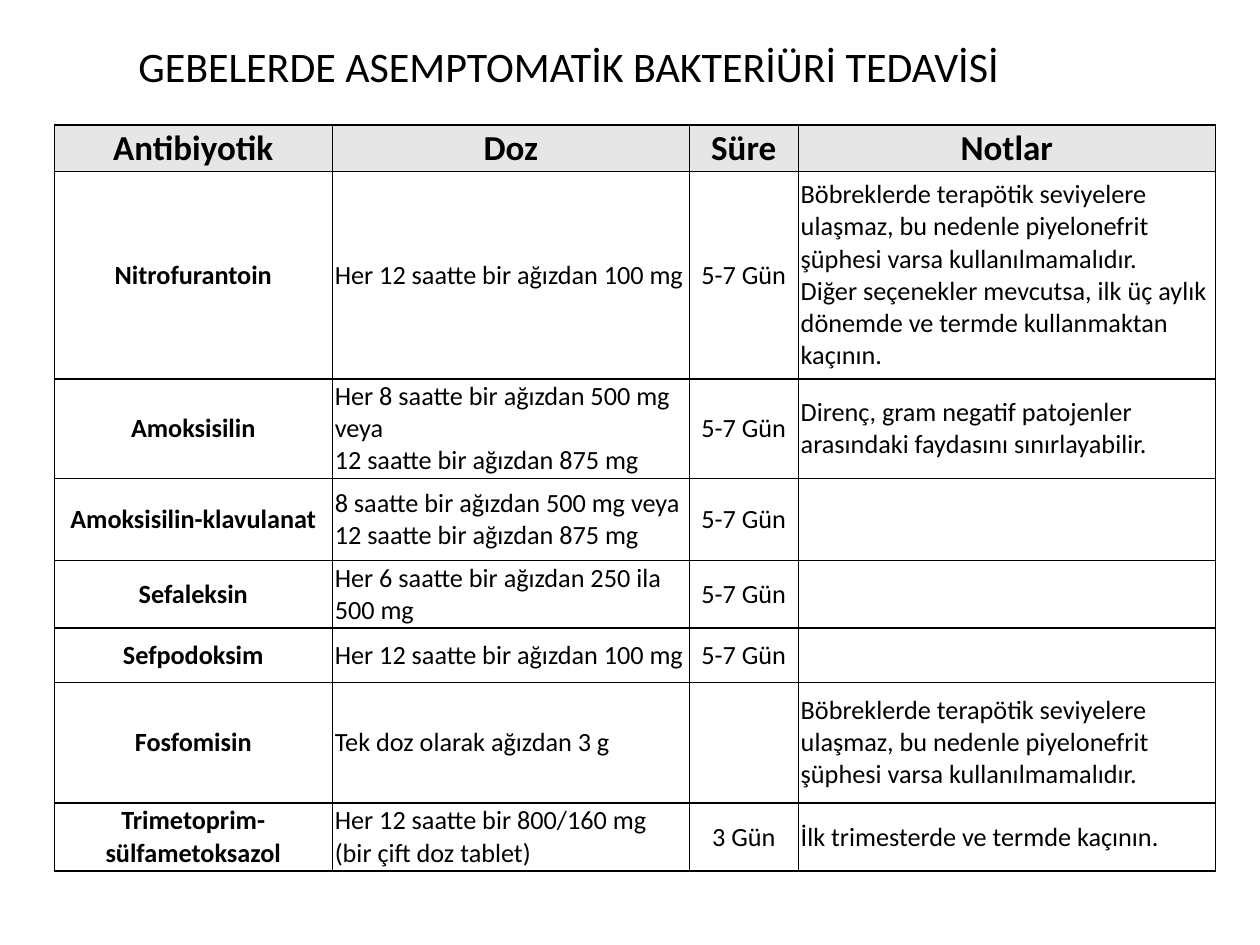
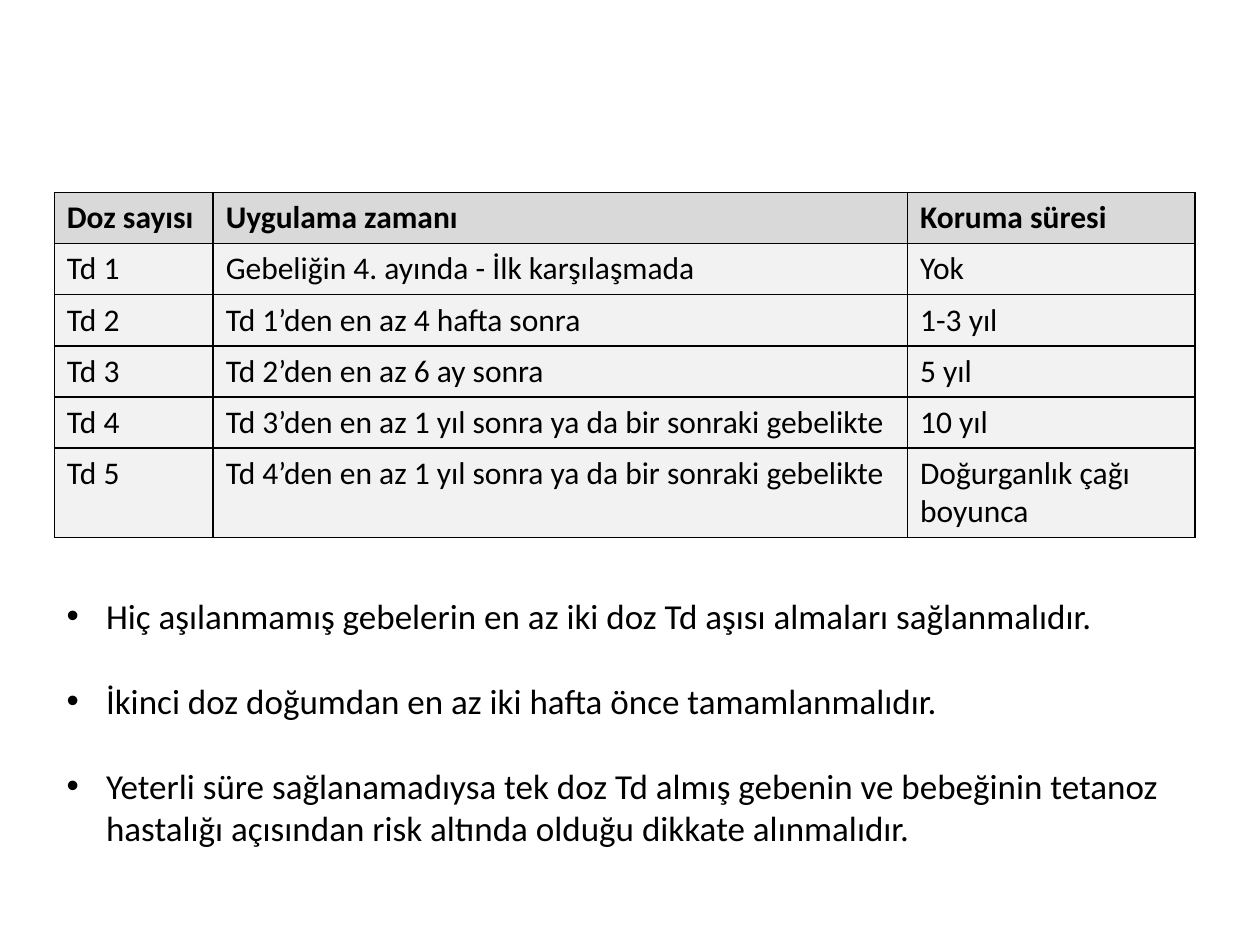
"""Two slides on antibiotic treatment and Td vaccination in pregnancy."""
from pptx import Presentation
from pptx.dml.color import RGBColor as Rgb
from pptx.enum.text import MSO_ANCHOR as Anchor, PP_ALIGN as Align
from pptx.oxml import parse_xml
from pptx.oxml.ns import nsdecls
from pptx.util import Pt

FONT = "Calibri"
INK = {"text": "000000", "head": "E6E6E6", "body": "FFFFFF",
       "dark": "D9D9D9", "pale": "F2F2F2"}
LEFT = 31
WEEK = "5-7 Gün"
KIDNEY = ("Böbreklerde terapötik seviyelere ulaşmaz, bu nedenle piyelonefrit "
          "şüphesi varsa kullanılmamalıdır.")

TITLE = "GEBELERDE ASEMPTOMATİK BAKTERİÜRİ TEDAVİSİ"
DRUGS = [
    ("Antibiyotik", "Doz", "Süre", "Notlar"),
    ("Nitrofurantoin", "Her 12 saatte bir ağızdan 100 mg", WEEK,
     KIDNEY + "\nDiğer seçenekler mevcutsa, ilk üç aylık dönemde ve termde "
     "kullanmaktan kaçının."),
    ("Amoksisilin",
     "Her 8 saatte bir ağızdan 500 mg veya\n12 saatte bir ağızdan 875 mg",
     WEEK, "Direnç, gram negatif patojenler arasındaki faydasını sınırlayabilir."),
    ("Amoksisilin-klavulanat",
     "8 saatte bir ağızdan 500 mg veya\v12 saatte bir ağızdan 875 mg", WEEK, ""),
    ("Sefaleksin", "Her 6 saatte bir ağızdan 250 ila 500 mg", WEEK, ""),
    ("Sefpodoksim", "Her 12 saatte bir ağızdan 100 mg", WEEK, ""),
    ("Fosfomisin", "Tek doz olarak ağızdan 3 g", "", KIDNEY),
    ("Trimetoprim-sülfametoksazol",
     "Her 12 saatte bir 800/160 mg (bir çift doz tablet)", "3 Gün",
     "İlk trimesterde ve termde kaçının."),
]
DOSES = [
    ("Doz sayısı", "Uygulama zamanı", "Koruma süresi"),
    ("Td 1", "Gebeliğin 4. ayında - İlk karşılaşmada", "Yok"),
    ("Td 2", "Td 1’den en az 4 hafta sonra", "1-3 yıl"),
    ("Td 3", "Td 2’den en az 6 ay sonra", "5 yıl"),
    ("Td 4", "Td 3’den en az 1 yıl sonra ya da bir sonraki gebelikte", "10 yıl"),
    ("Td 5", "Td 4’den en az 1 yıl sonra ya da bir sonraki gebelikte",
     "Doğurganlık çağı boyunca"),
]
POINTS = [
    "Hiç aşılanmamış gebelerin en az iki doz Td aşısı almaları sağlanmalıdır.",
    "İkinci doz doğumdan en az iki hafta önce tamamlanmalıdır.",
    "Yeterli süre sağlanamadıysa tek doz Td almış gebenin ve bebeğinin tetanoz "
    "hastalığı açısından risk altında olduğu dikkate alınmalıdır.",
]


def style(para, size, bold=False, align=Align.LEFT):
    para.alignment = align
    font = para.font
    font.name, font.size, font.bold = FONT, Pt(size), bold
    font.color.rgb = Rgb.from_string(INK["text"])


def edge(cell):
    props = cell._tc.get_or_add_tcPr()
    for spot, side in enumerate("LRTB"):
        props.insert(spot, parse_xml(
            f'<a:ln{side} {nsdecls("a")} w="12700"><a:solidFill>'
            f'<a:srgbClr val="{INK["text"]}"/></a:solidFill></a:ln{side}>'))


def add_grid(slide, rows, top, widths, heights, fills, look):
    grid = slide.shapes.add_table(
        len(rows), len(widths), Pt(LEFT), Pt(top),
        Pt(sum(widths)), Pt(sum(heights))).table
    grid.first_row = grid.horz_banding = False
    for col, width in zip(grid.columns, widths):
        col.width = Pt(width)
    for r, (row, height) in enumerate(zip(rows, heights)):
        grid.rows[r].height = Pt(height)
        for c, text in enumerate(row):
            cell = grid.cell(r, c)
            cell.text = text
            cell.fill.solid()
            cell.fill.fore_color.rgb = Rgb.from_string(INK[fills[r > 0]])
            edge(cell)
            look(cell, r, c)


def drug_look(cell, r, c):
    cell.vertical_anchor = Anchor.MIDDLE
    cell.margin_left = cell.margin_right = Pt(1.44)
    cell.margin_top = cell.margin_bottom = Pt(0.72)
    mid = r == 0 or c in (0, 2)
    for para in cell.text_frame.paragraphs:
        style(para, 15 if r else 20, r == 0 or c == 0,
              Align.CENTER if mid else Align.LEFT)


def dose_look(cell, r, c):
    style(cell.text_frame.paragraphs[0], 18, r == 0)


def add_box(slide, left, top, width, height):
    frame = slide.shapes.add_textbox(
        Pt(left), Pt(top), Pt(width), Pt(height)).text_frame
    frame.word_wrap = True
    return frame


def add_points(slide):
    frame = add_box(slide, LEFT, 336.2, 652, 152.6)
    frame.text = "\n".join(POINTS)
    for n, para in enumerate(frame.paragraphs):
        props = para._p.get_or_add_pPr()
        props.set("marL", str(Pt(22.5)))
        props.set("indent", str(-Pt(22.5)))
        for mark in ('buFont typeface="Arial"', 'buChar char="•"'):
            props.append(parse_xml(f'<a:{mark} {nsdecls("a")}/>'))
        if n:
            para.space_before = Pt(24.4)
        style(para, 20)


def main():
    deck = Presentation()
    deck.slide_width, deck.slide_height = Pt(720), Pt(540)
    cure, shot = (deck.slides.add_slide(deck.slide_layouts[6]) for _ in range(2))

    add_grid(cure, DRUGS, 71.4, (158.9, 204, 62.3, 238.3),
             (26.6, 118.6, 56.9, 46.9, 38.6, 31.1, 68.9, 38.9),
             ("head", "body"), drug_look)
    title = add_box(cure, 56.5, 15.1, 537, 45.4)
    title.vertical_anchor = Anchor.MIDDLE
    title.text = TITLE
    style(title.paragraphs[0], 24, align=Align.CENTER)

    add_grid(shot, DOSES, 110, (90.8, 396.8, 164.4), [29.2] * 5 + [51.2],
             ("dark", "pale"), dose_look)
    add_points(shot)
    deck.save("out.pptx")


if __name__ == "__main__":
    main()
